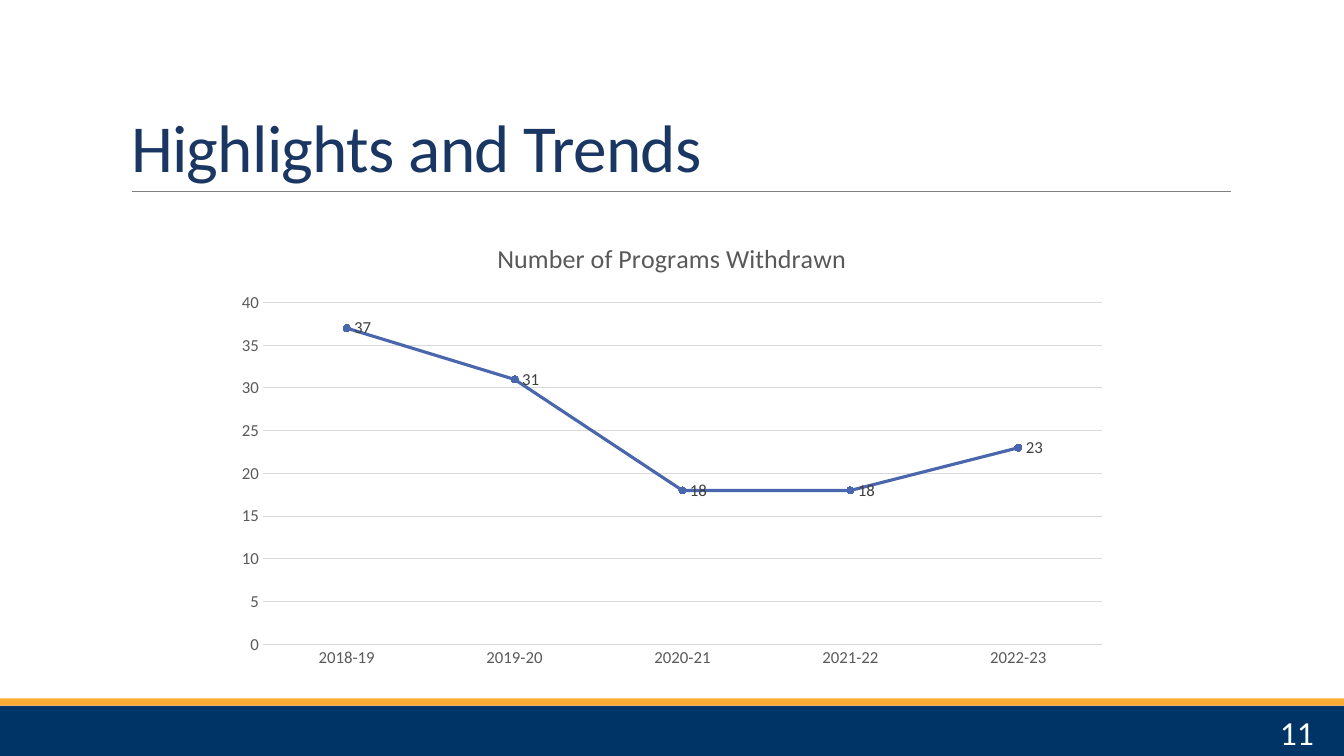
from pptx import Presentation
from pptx.chart.data import CategoryChartData
from pptx.dml.color import RGBColor
from pptx.enum.chart import XL_CHART_TYPE, XL_LABEL_POSITION, XL_MARKER_STYLE, XL_TICK_MARK
from pptx.enum.shapes import MSO_CONNECTOR, MSO_SHAPE
from pptx.enum.text import MSO_ANCHOR, PP_ALIGN
from pptx.oxml.ns import qn
from pptx.util import Inches, Pt

FONT = "Calibri"
NAVY, GOLD, TITLE, BLUE = "003366", "FAAC35", "1A3763", "4A66AC"
GRAY, GRID, DARK, RULE, WHITE = "595959", "D9D9D9", "404040", "808080", "FFFFFF"
YEARS = ["2018-19", "2019-20", "2020-21", "2021-22", "2022-23"]
COUNTS = [37, 31, 18, 18, 23]


def paint(color, code):
    color.rgb = RGBColor.from_string(code)


def fill(target, code):
    target.fill.solid()
    paint(target.fill.fore_color, code)


def stroke(line, code, width):
    paint(line.color, code)
    line.width = Pt(width)


def style(font, size, code):
    font.name, font.size, font.bold = FONT, Pt(size), False
    paint(font.color, code)


def place(shape, left, top, width, height):
    shape.left, shape.top = Inches(left), Inches(top)
    shape.width, shape.height = Inches(width), Inches(height)


def write(para, text, size, code):
    run = para.add_run()
    run.text = text
    style(run.font, size, code)
    return run


def add_band(slide, top, height, code):
    band = slide.shapes.add_shape(
        MSO_SHAPE.RECTANGLE, 0, Inches(top), Inches(13.33), Inches(height))
    band.shadow.inherit = False
    fill(band, code)
    band.line.fill.background()


def add_rule(slide, left, right, top):
    rule = slide.shapes.add_connector(
        MSO_CONNECTOR.STRAIGHT, Inches(left), Inches(top), Inches(right), Inches(top))
    stroke(rule.line, RULE, 0.5)
    props = rule._element.spPr
    props.append(props.makeelement(qn("a:effectLst"), {}))


def set_title(slide, text):
    title = slide.shapes.title
    place(title, 1.2, 0.31, 11, 1.59)
    frame = title.text_frame
    frame.vertical_anchor = MSO_ANCHOR.BOTTOM
    para = frame.paragraphs[0]
    para.alignment = PP_ALIGN.LEFT
    para.line_spacing = 0.85
    run = write(para, text, 48, TITLE)
    run.font._element.set("spc", "-50")


def add_number(slide, text):
    box = slide.shapes.add_textbox(Inches(11.7), Inches(7.06), Inches(1.43), Inches(0.4))
    frame = box.text_frame
    frame.word_wrap = True
    frame.vertical_anchor = MSO_ANCHOR.MIDDLE
    para = frame.paragraphs[0]
    para.alignment = PP_ALIGN.RIGHT
    write(para, text, 24, WHITE)


def style_axes(chart):
    for axis in (chart.category_axis, chart.value_axis):
        axis.major_tick_mark = axis.minor_tick_mark = XL_TICK_MARK.NONE
        style(axis.tick_labels.font, 12, GRAY)
    stroke(chart.category_axis.format.line, GRID, 0.75)
    scale = chart.value_axis
    scale.minimum_scale, scale.maximum_scale, scale.major_unit = 0, 40, 5
    scale.format.line.fill.background()
    stroke(scale.major_gridlines.format.line, GRID, 0.75)


def style_series(series):
    series.smooth = False
    stroke(series.format.line, BLUE, 2.25)
    mark = series.marker
    mark.style, mark.size = XL_MARKER_STYLE.CIRCLE, 5
    fill(mark.format, BLUE)
    stroke(mark.format.line, BLUE, 0.75)
    labels = series.data_labels
    labels.show_value = True
    labels.position = XL_LABEL_POSITION.RIGHT
    style(labels.font, 12, DARK)


def add_trend(slide, name):
    data = CategoryChartData()
    data.categories = YEARS
    data.add_series(name, COUNTS)
    chart = slide.shapes.add_chart(
        XL_CHART_TYPE.LINE_MARKERS_STACKED, Inches(2.22), Inches(2.19),
        Inches(8.89), Inches(4.53), data).chart
    style(chart.font, 10, "000000")
    chart.has_legend = False
    chart.has_title = True
    write(chart.chart_title.text_frame.paragraphs[0], name, 18.6, GRAY)
    chart.chart_title.include_in_layout = False
    plot = chart.plots[0]
    plot.vary_by_categories = False
    style_axes(chart)
    style_series(plot.series[0])


def main():
    deck = Presentation()
    deck.slide_width, deck.slide_height = Inches(13.33), Inches(7.5)
    slide = deck.slides.add_slide(deck.slide_layouts[5])
    fill(slide.background, WHITE)
    add_band(slide, 7, 0.5, NAVY)
    add_band(slide, 6.93, 0.07, GOLD)
    add_rule(slide, 1.31, 12.21, 1.9)
    set_title(slide, "Highlights and Trends")
    add_number(slide, "11")
    add_trend(slide, "Number of Programs Withdrawn")
    deck.save("out.pptx")


if __name__ == "__main__":
    main()
